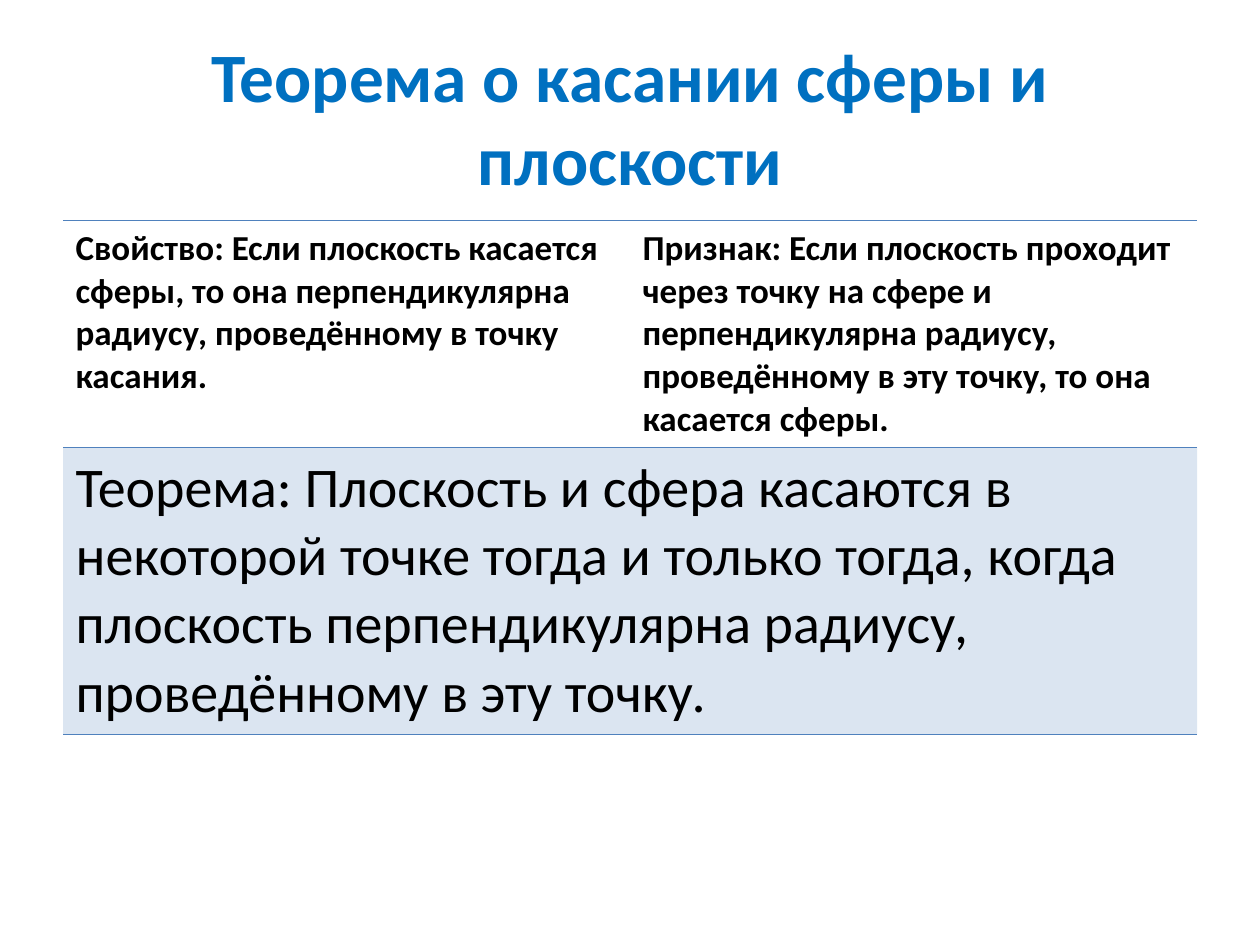
"""Build a slide stating the theorem on a plane tangent to a sphere."""
from dataclasses import dataclass

from lxml import etree
from pptx import Presentation
from pptx.dml.color import RGBColor
from pptx.enum import text
from pptx.oxml import ns
from pptx.table import Table, _Cell
from pptx.util import Pt

TITLE_BLUE = RGBColor(0x00, 0x70, 0xC0)
RULE_BLUE = RGBColor(0x4F, 0x81, 0xBD)
BLACK = RGBColor(0x00, 0x00, 0x00)
FONT = "Calibri"
MARGIN, CONTENT_WIDTH = 36, 648
ROW_HEIGHTS = (129.6, 164)


@dataclass
class Statement:
    row: int
    column: int
    wording: str
    size: float
    bold: bool
    rules: tuple[str, ...]
    opacity: int = 0


STATEMENTS = (
    Statement(0, 0, "Свойство: Если плоскость касается сферы, то она перпендикулярна "
              "радиусу, проведённому в точку касания.", 20, True, ("lnT", "lnB")),
    Statement(0, 1, "Признак: Если плоскость проходит через точку на сфере и "
              "перпендикулярна радиусу, проведённому в эту точку, то она касается сферы.",
              20, True, ("lnT", "lnB")),
    Statement(1, 0, "Теорема: Плоскость и сфера касаются в некоторой точке тогда и только "
              "тогда, когда плоскость перпендикулярна радиусу, проведённому в эту точку.",
              32, False, ("lnT", "lnB"), 20),
)


def add_run(paragraph, wording: str, size: float, bold: bool, color: RGBColor) -> None:
    run = paragraph.add_run()
    run.text = wording
    run.font.name = FONT
    run.font.size = Pt(size)
    run.font.bold = bold
    run.font.color.rgb = color


def set_borders(cell: _Cell, rules: tuple[str, ...]) -> None:
    properties = cell._tc.get_or_add_tcPr()
    for side in ("lnL", "lnR", "lnT", "lnB"):
        line = etree.SubElement(properties, ns.qn(f"a:{side}"), w=str(Pt(1)))
        if side in rules:
            fill = etree.SubElement(line, ns.qn("a:solidFill"))
            etree.SubElement(fill, ns.qn("a:srgbClr"), val=str(RULE_BLUE))
        else:
            etree.SubElement(line, ns.qn("a:noFill"))


def set_fill(cell: _Cell, opacity: int) -> None:
    if not opacity:
        cell.fill.background()
        return
    cell.fill.solid()
    cell.fill.fore_color.rgb = RULE_BLUE
    color = cell._tc.tcPr.find(".//" + ns.qn("a:solidFill") + "[last()]/" + ns.qn("a:srgbClr"))
    color = cell._tc.tcPr.find(ns.qn("a:solidFill")).find(ns.qn("a:srgbClr"))
    etree.SubElement(color, ns.qn("a:alpha"), val=str(opacity * 1000))


def write_statement(table: Table, statement: Statement) -> None:
    cell = table.cell(statement.row, statement.column)
    add_run(cell.text_frame.paragraphs[0], statement.wording, statement.size,
            statement.bold, BLACK)
    covered = [cell]
    if cell.is_merge_origin:
        covered += [table.cell(statement.row, column)
                    for column in range(1, cell.span_width)]
    for part in covered:
        set_borders(part, statement.rules)
        set_fill(part, statement.opacity)


def main() -> None:
    deck = Presentation()
    deck.slide_width, deck.slide_height = Pt(720), Pt(540)
    slide = deck.slides.add_slide(deck.slide_layouts[5])

    title = slide.shapes.title
    title.left, title.top = Pt(MARGIN), Pt(21.6)
    title.width, title.height = Pt(CONTENT_WIDTH), Pt(90)
    title.text_frame.vertical_anchor = text.MSO_ANCHOR.MIDDLE
    heading = title.text_frame.paragraphs[0]
    heading.alignment = text.PP_ALIGN.CENTER
    add_run(heading, "Теорема о касании сферы и плоскости", 39.6, True, TITLE_BLUE)

    table = slide.shapes.add_table(2, 2, Pt(MARGIN), Pt(126), Pt(CONTENT_WIDTH),
                                   Pt(sum(ROW_HEIGHTS))).table
    table.first_row = table.horz_banding = False
    for row, height in zip(table.rows, ROW_HEIGHTS):
        row.height = Pt(height)
    table.cell(1, 0).merge(table.cell(1, 1))
    for statement in STATEMENTS:
        write_statement(table, statement)

    deck.save("out.pptx")


if __name__ == "__main__":
    main()
